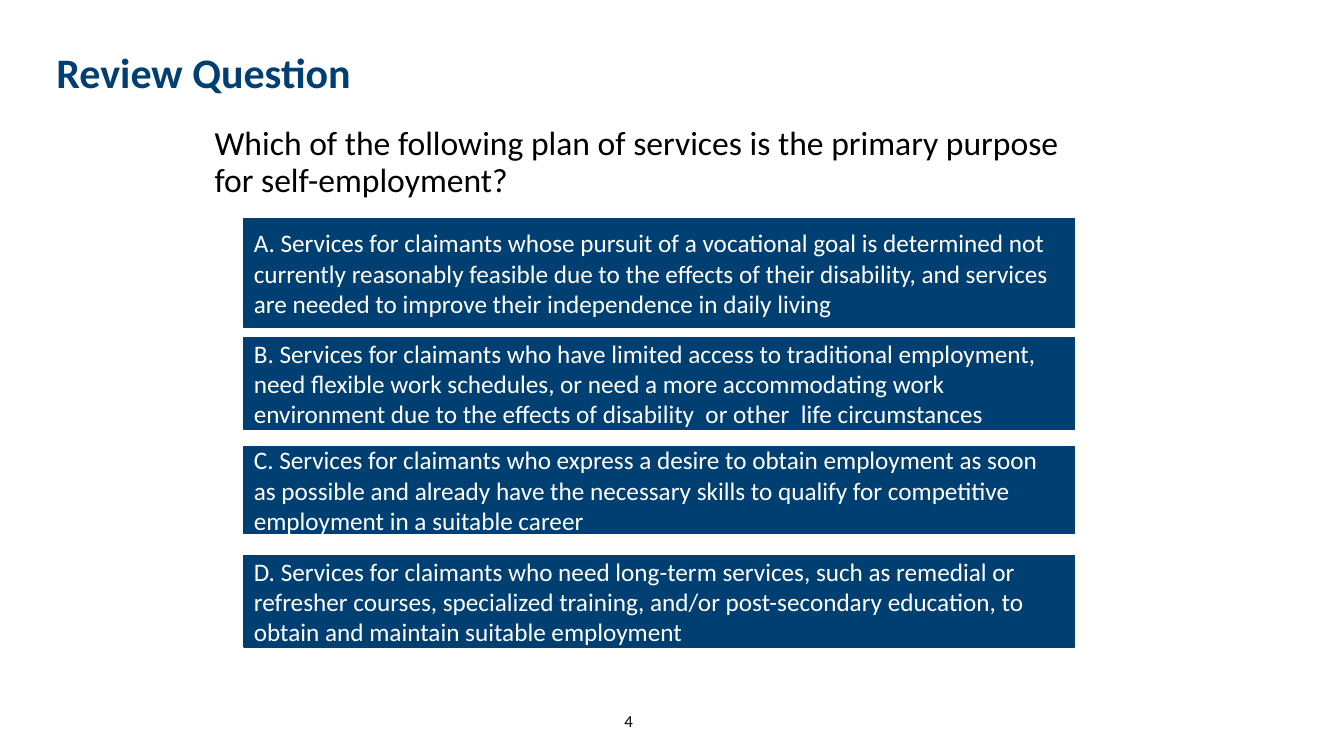
from dataclasses import dataclass

from pptx import Presentation
from pptx.dml.color import RGBColor
from pptx.enum.shapes import MSO_SHAPE
from pptx.enum.text import MSO_ANCHOR, MSO_AUTO_SIZE, PP_ALIGN
from pptx.shapes.autoshape import Shape
from pptx.slide import Slide
from pptx.util import Inches, Pt

NAVY = RGBColor(0x00, 0x3F, 0x72)
BLUE = RGBColor(0x00, 0x3F, 0x71)
BLACK = RGBColor(0x00, 0x00, 0x00)
WHITE = RGBColor(0xFF, 0xFF, 0xFF)
FONT = "Calibri"
WIDE = Inches(13.33)
HIGH = Inches(7.5)
LEFT = 18.15
SPAN = 61.82


@dataclass(frozen=True)
class Area:
    left: float
    top: float
    width: float
    height: float

    def edges(self) -> tuple[int, int, int, int]:
        return (
            round(WIDE * self.left / 100),
            round(HIGH * self.top / 100),
            round(WIDE * self.width / 100),
            round(HIGH * self.height / 100),
        )


@dataclass(frozen=True)
class Style:
    size: int
    color: RGBColor
    bold: bool = False
    align: PP_ALIGN = PP_ALIGN.LEFT
    anchor: MSO_ANCHOR = MSO_ANCHOR.MIDDLE
    space: float = 1.0


@dataclass(frozen=True)
class Answer:
    top: float
    height: float
    text: str


HEAD = Style(30, NAVY, bold=True, space=0.9)
ASK = Style(24, BLACK, anchor=MSO_ANCHOR.TOP, space=0.9)
ITEM = Style(18, WHITE)
PAGE = Style(12, BLACK, align=PP_ALIGN.CENTER)

ANSWERS = [
    Answer(28.93, 14.4, "A. Services for claimants whose pursuit of a vocational goal is "
           "determined not currently reasonably feasible due to the effects of their "
           "disability, and services are needed to improve their independence in daily living"),
    Answer(44.67, 12.13, "B. Services for claimants who have limited access to traditional "
           "employment, need flexible work schedules, or need a more accommodating work "
           "environment due to the effects of disability  or other  life circumstances"),
    Answer(59.07, 11.47, "C. Services for claimants who express a desire to obtain employment "
           "as soon as possible and already have the necessary skills to qualify for "
           "competitive employment in a suitable career"),
    Answer(73.47, 12.13, "D. Services for claimants who need long-term services, such as "
           "remedial or refresher courses, specialized training, and/or post-secondary "
           "education, to obtain and maintain suitable employment"),
]


def write(shape: Shape, text: str, style: Style) -> None:
    frame = shape.text_frame
    frame.word_wrap = True
    frame.auto_size = MSO_AUTO_SIZE.NONE
    frame.vertical_anchor = style.anchor
    para = frame.paragraphs[0]
    para.alignment = style.align
    para.line_spacing = style.space
    para.space_before = Pt(0)
    run = para.add_run()
    run.text = text
    font = run.font
    font.name = FONT
    font.size = Pt(style.size)
    font.bold = style.bold
    font.color.rgb = style.color


def add_title(slide: Slide, area: Area, text: str) -> None:
    title = slide.shapes.title
    title.left, title.top, title.width, title.height = area.edges()
    write(title, text, HEAD)


def add_text(slide: Slide, area: Area, text: str, style: Style) -> None:
    write(slide.shapes.add_textbox(*area.edges()), text, style)


def add_answer(slide: Slide, answer: Answer) -> None:
    area = Area(LEFT, answer.top, SPAN, answer.height)
    box = slide.shapes.add_shape(MSO_SHAPE.RECTANGLE, *area.edges())
    box.shadow.inherit = False
    box.fill.solid()
    box.fill.fore_color.rgb = BLUE
    box.line.color.rgb = BLUE
    box.line.width = Pt(1)
    write(box, answer.text, ITEM)


def main() -> None:
    deck = Presentation()
    deck.slide_width = WIDE
    deck.slide_height = HIGH
    slide = deck.slides.add_slide(deck.slide_layouts.get_by_name("Title Only"))
    add_title(slide, Area(3.45, 4.27, 79.74, 11.33), "Review Question")
    add_text(
        slide,
        Area(15.23, 16.13, 64.67, 69.47),
        "Which of the following plan of services is the primary purpose for self-employment?",
        ASK,
    )
    for answer in ANSWERS:
        add_answer(slide, answer)
    add_text(slide, Area(43.96, 92.67, 5.63, 5.33), "4", PAGE)
    deck.save("out.pptx")


if __name__ == "__main__":
    main()
